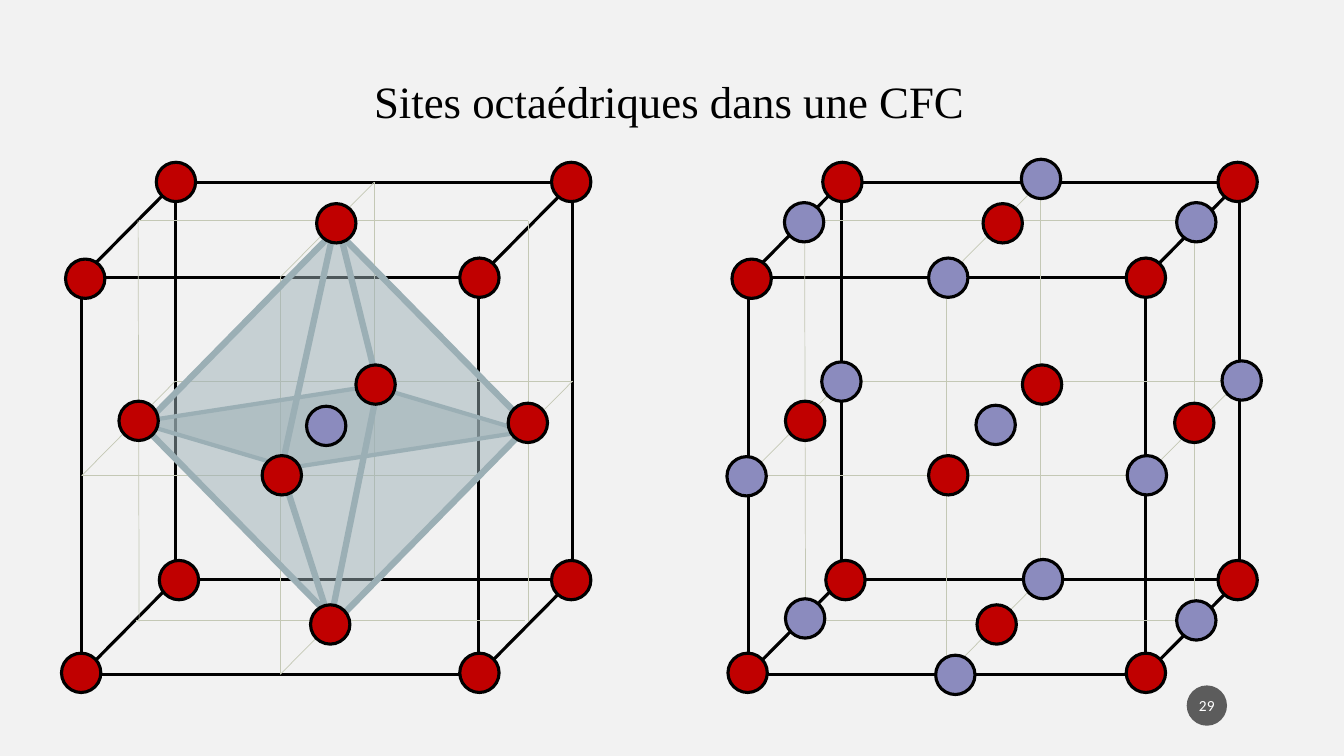
from lxml import etree
from pptx import Presentation
from pptx.dml.color import RGBColor
from pptx.enum.shapes import MSO_CONNECTOR, MSO_SHAPE
from pptx.enum.text import MSO_ANCHOR, PP_ALIGN
from pptx.oxml.ns import qn
from pptx.util import Inches, Pt

BACKGROUND = RGBColor(0xF2, 0xF2, 0xF2)
BLACK = RGBColor(0, 0, 0)
WHITE = RGBColor(0xFF, 0xFF, 0xFF)
RED = RGBColor(0xC0, 0, 0)
VIOLET = RGBColor(0x8B, 0x8B, 0xBE)
GUIDE = RGBColor(0xC4, 0xC8, 0xB5)
OCTAHEDRON = RGBColor(0x9B, 0xAF, 0xB5)
BADGE = RGBColor(0x1D, 0x1D, 0x1D)

CUBE = 3.94
ATOM = 0.39
FRONT = (0.81, 2.75)
BACK = (1.74, 1.81)
CELL_OFFSETS = (0, 6.61)

GUIDE_JOINTS = [
    ("front", 1, "front", 3), ("front", 3, "back", 3),
    ("back", 1, "back", 3), ("front", 1, "back", 1),
    ("front", 2, "front", 0), ("front", 0, "back", 0),
    ("back", 2, "back", 0), ("front", 2, "back", 2),
]
MIDPLANE = [
    (1.38, 2.19, 5.24, 2.19), (1.35, 6.15, 5.21, 6.15),
    (5.24, 6.17, 5.24, 2.19), (1.37, 2.19, 1.38, 6.17),
]
CORNER_ATOMS = [
    (0.65, 2.57), (4.56, 2.56), (1.55, 1.61), (5.47, 1.61),
    (5.47, 5.56), (4.56, 6.48), (1.58, 5.56), (0.61, 6.48),
]
FACE_ATOMS = [
    (2.6, 4.52), (3.53, 3.62), (5.04, 4), (1.18, 3.98), (3.08, 6), (3.14, 2.02),
]
OCTAHEDRON_EDGES = [
    (2.78, 4.7, 3.32, 2.24), (3.28, 6.19, 2.8, 4.7),
    (3.27, 6.2, 3.75, 3.83), (3.75, 3.83, 3.36, 2.26),
]
CENTRE_SITE = [(3.04, 4.03)]
ALL_SITES = [
    (9.68, 4.02), (7.21, 4.53), (8.15, 3.59), (11.18, 4.52), (12.12, 3.58),
    (10.13, 1.58), (9.21, 2.56), (7.78, 2.01), (11.67, 2.01),
    (10.15, 5.55), (7.79, 5.94), (9.28, 6.5), (11.67, 5.96),
]

prs = Presentation()
prs.slide_width = Inches(13.33)
prs.slide_height = Inches(7.5)
slide = prs.slides.add_slide(prs.slide_layouts[6])
slide.background.fill.solid()
slide.background.fill.fore_color.rgb = BACKGROUND


def add_figure(kind, box, fill=None, alpha=100, line=None, weight=2.25):
    figure = slide.shapes.add_shape(kind, *[Inches(v) for v in box])
    figure.shadow.inherit = False
    if fill is None:
        figure.fill.background()
    else:
        figure.fill.solid()
        figure.fill.fore_color.rgb = fill
        if alpha < 100:
            color = figure.fill._xPr.find(qn("a:solidFill"))[0]
            etree.SubElement(color, qn("a:alpha")).set("val", str(alpha * 1000))
    if line is None:
        figure.line.fill.background()
    else:
        figure.line.color.rgb = line
        figure.line.width = Pt(weight)
    return figure


def add_edge(ends, color, weight):
    edge = slide.shapes.add_connector(MSO_CONNECTOR.STRAIGHT, *[Inches(v) for v in ends])
    edge.line.color.rgb = color
    edge.line.width = Pt(weight)
    etree.SubElement(edge._element.spPr, qn("a:effectLst"))
    return edge


title = slide.shapes.add_textbox(Inches(2.51), Inches(0.68), Inches(8.37), Inches(0.64))
title.text_frame.word_wrap = True
title_line = title.text_frame.paragraphs[0]
title_line.alignment = PP_ALIGN.CENTER
title_run = title_line.add_run()
title_run.text = "Sites octaédriques dans une CFC "
title_run.font.name = "Times New Roman"
title_run.font.size = Pt(32)
title_run.font.color.rgb = BLACK

for dx, sites in zip(CELL_OFFSETS, (CENTRE_SITE, ALL_SITES)):
    faces = {}
    for side, (x, y) in (("front", FRONT), ("back", BACK)):
        faces[side] = add_figure(MSO_SHAPE.RECTANGLE, (x + dx, y, CUBE, CUBE), line=BLACK)

    for down in (0, CUBE):
        for across in (0, CUBE):
            add_edge((FRONT[0] + dx + across, FRONT[1] + down,
                      BACK[0] + dx + across, BACK[1] + down), BLACK, 2.25)

    for begin_face, begin_site, end_face, end_site in GUIDE_JOINTS:
        guide = add_edge((0, 0, 1, 1), GUIDE, 0.5)
        guide.begin_connect(faces[begin_face], begin_site)
        guide.end_connect(faces[end_face], end_site)
    for x1, y1, x2, y2 in MIDPLANE:
        add_edge((x1 + dx, y1, x2 + dx, y2), GUIDE, 0.5)

    for x, y in CORNER_ATOMS:
        add_figure(MSO_SHAPE.OVAL, (x + dx, y, ATOM, ATOM), RED, line=BLACK)

    if sites is CENTRE_SITE:
        add_figure(MSO_SHAPE.DIAMOND, (1.42, 2.28, 3.82, 3.89),
                   OCTAHEDRON, 50, OCTAHEDRON, 4.5)
        for ends in OCTAHEDRON_EDGES:
            add_edge(ends, OCTAHEDRON, 4.5)
        equator = add_figure(MSO_SHAPE.PARALLELOGRAM, (1.42, 3.73, 3.73, 1.01),
                             OCTAHEDRON, 50, OCTAHEDRON, 3)
        equator.adjustments[0] = 2.12
        equator.rotation = 196.5

    for x, y in FACE_ATOMS:
        add_figure(MSO_SHAPE.OVAL, (x + dx, y, ATOM, ATOM), RED, line=BLACK)
    for x, y in sites:
        add_figure(MSO_SHAPE.OVAL, (x, y, ATOM, ATOM), VIOLET, line=BLACK)

page_badge = add_figure(MSO_SHAPE.OVAL, (11.77, 6.8, 0.4, 0.4), BADGE, 70)
badge_frame = page_badge.text_frame
badge_frame.margin_left = badge_frame.margin_right = Inches(0.02)
badge_frame.margin_top = badge_frame.margin_bottom = Inches(0.05)
badge_frame.vertical_anchor = MSO_ANCHOR.MIDDLE
page_line = badge_frame.paragraphs[0]
page_line.alignment = PP_ALIGN.CENTER
page_run = page_line.add_run()
page_run.text = "29"
page_run.font.name = "Calibri"
page_run.font.size = Pt(11)
page_run.font.color.rgb = WHITE

prs.save("out.pptx")
